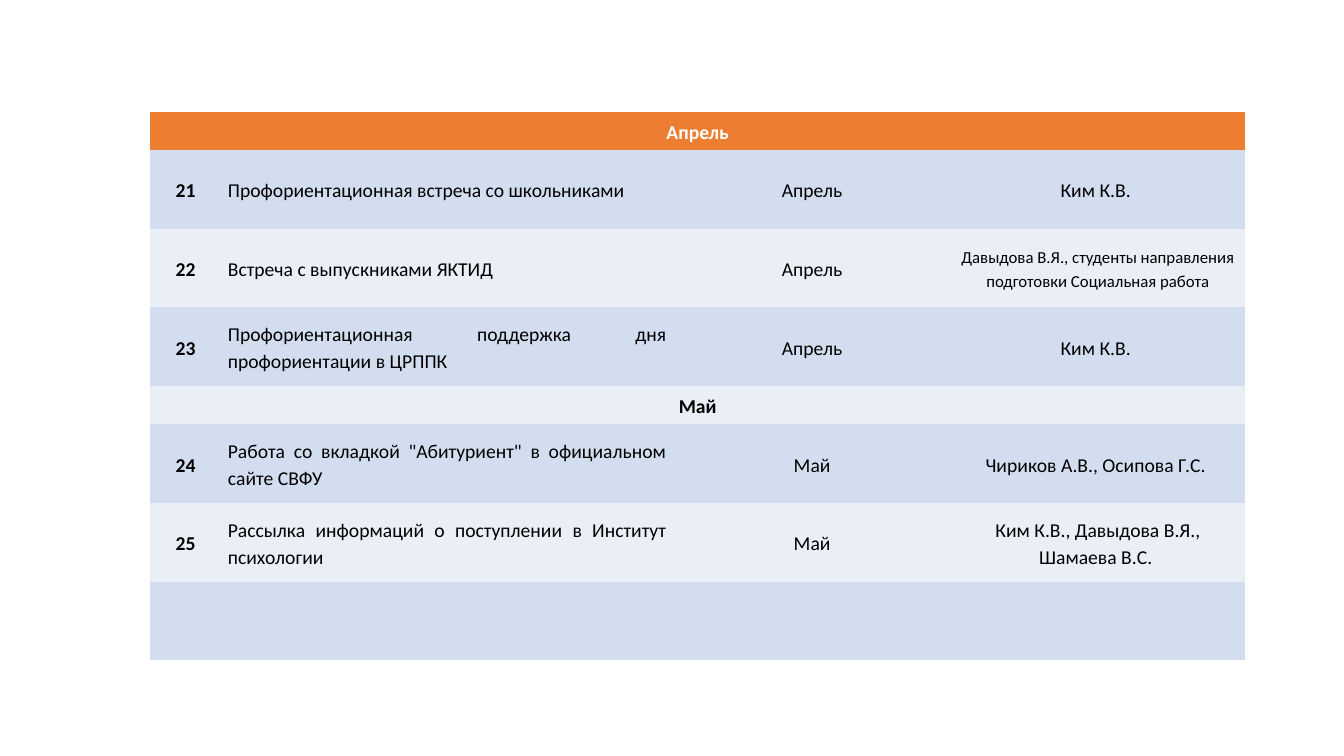
"""Builds a slide with the April and May career guidance plan as a table."""
from pptx import Presentation
from pptx.dml.color import RGBColor
from pptx.enum.text import MSO_ANCHOR as Anchor, PP_ALIGN as Align
from pptx.util import Pt

EMU_PER_PX = 9144
NO_GRID_STYLE = "{2D5ABB26-0587-4C30-8999-92F81FD0307C}"
COLORS = {"header": "ED7D31", "odd": "D2DEEF", "even": "EAEFF7",
          "text": "000000", "header_text": "FFFFFF"}
COLUMN_WIDTHS = [70, 449, 275, 292]
MONTH_HEIGHT, EVENT_HEIGHT = 38, 78
PLAN = [
    ["Апрель"],
    ["21", "Профориентационная встреча со школьниками ", "Апрель", "Ким К.В. "],
    ["22", "Встреча с выпускниками ЯКТИД", "Апрель",
     "Давыдова В.Я., студенты направления подготовки Социальная работа"],
    ["23", "Профориентационная поддержка дня профориентации в ЦРППК ",
     "Апрель", "Ким К.В. "],
    ["Май"],
    ["24", "Работа со вкладкой \"Абитуриент\" в официальном сайте СВФУ",
     "Май", "Чириков А.В., Осипова Г.С. "],
    ["25", "Рассылка информаций о поступлении в Институт психологии",
     "Май", "Ким К.В., Давыдова В.Я., Шамаева В.С. "],
    ["", "", "", ""],
]
SMALL_TEXT_CELL = (2, 3)


def px(value):
    return value * EMU_PER_PX


class SlideBuilder:
    def __init__(self, page, font="Calibri", size=14):
        self.page = page
        self.font = font
        self.size = size

    def table(self, left, top, widths, heights):
        frame = self.page.shapes.add_table(
            len(heights), len(widths), px(left), px(top),
            px(sum(widths)), px(sum(heights)))
        table = frame.table
        table._tbl.tblPr.find("{*}tableStyleId").text = NO_GRID_STYLE
        for column, width in zip(table.columns, widths):
            column.width = px(width)
        for row, height in zip(table.rows, heights):
            row.height = px(height)
        return table

    def fill(self, cell, color):
        cell.fill.solid()
        cell.fill.fore_color.rgb = RGBColor.from_string(COLORS[color])

    def text(self, cell, words, color, align=Align.CENTER, bold=False, size=None):
        cell.vertical_anchor = Anchor.MIDDLE
        cell.margin_left = cell.margin_right = px(7)
        cell.margin_top = cell.margin_bottom = 0
        para = cell.text_frame.paragraphs[0]
        para.alignment = align
        para.line_spacing = 1.15
        span = para.add_run()
        span.text = words
        span.font.name = self.font
        span.font.size = Pt(size or self.size)
        span.font.bold = bold
        span.font.color.rgb = RGBColor.from_string(COLORS[color])


def main():
    deck = Presentation()
    deck.slide_width, deck.slide_height = px(1333), px(750)
    builder = SlideBuilder(deck.slides.add_slide(deck.slide_layouts[6]))

    heights = [MONTH_HEIGHT if len(entry) == 1 else EVENT_HEIGHT for entry in PLAN]
    table = builder.table(149, 111, COLUMN_WIDTHS, heights)
    for row, entry in enumerate(PLAN):
        band = "header" if row == 0 else "odd" if row % 2 else "even"
        for column in range(len(COLUMN_WIDTHS)):
            builder.fill(table.cell(row, column), band)
        if len(entry) == 1:
            table.cell(row, 0).merge(table.cell(row, len(COLUMN_WIDTHS) - 1))
        for column, words in enumerate(entry):
            if words:
                builder.text(
                    table.cell(row, column), words,
                    color="header_text" if row == 0 else "text",
                    align=Align.JUSTIFY if column == 1 else Align.CENTER,
                    bold=column == 0,
                    size=12 if (row, column) == SMALL_TEXT_CELL else None)

    deck.save("out.pptx")


if __name__ == "__main__":
    main()
